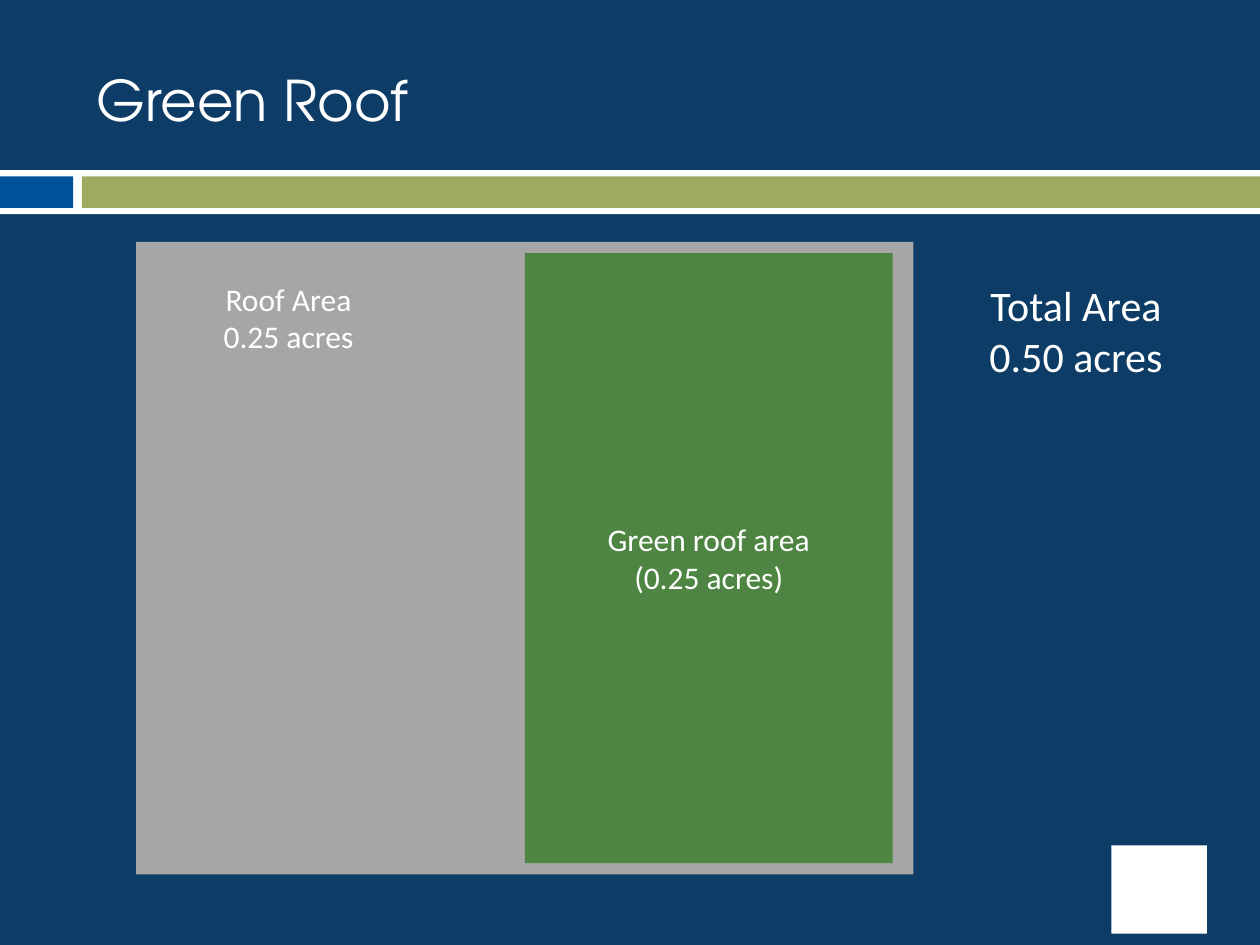
from dataclasses import dataclass

from pptx import Presentation
from pptx.dml.color import RGBColor
from pptx.enum.shapes import MSO_SHAPE
from pptx.enum.text import MSO_ANCHOR, PP_ALIGN
from pptx.oxml.ns import qn
from pptx.util import Inches, Pt
from lxml.etree import SubElement


@dataclass(frozen=True)
class Theme:
    """Colours, fonts and type sizes of the slide."""
    navy: str = "0D3C67"
    white: str = "FFFFFF"
    blue: str = "00529B"
    olive: str = "7F8E2B"
    gray: str = "A6A6A6"
    green: str = "4E8542"
    head: str = "TeX Gyre Adventor"
    body: str = "Calibri"
    title: int = 32
    large: int = 24
    small: int = 18


THEME = Theme()


def apply(target, values):
    """Set each attribute of the target from a dict of values."""
    for name, value in values.items():
        setattr(target, name, value)


def add_rect(slide, box, color, alpha=None):
    """Draw a plain filled rectangle, with opacity in percent if given."""
    rect = slide.shapes.add_shape(MSO_SHAPE.RECTANGLE, *map(Inches, box))
    rect.shadow.inherit = False
    rect.fill.solid()
    rect.fill.fore_color.rgb = RGBColor.from_string(color)
    rect.line.fill.background()
    if alpha is not None:
        tone = rect.fill._xPr.find(qn("a:solidFill"))[0]
        SubElement(tone, qn("a:alpha")).set("val", str(alpha * 1000))
    return rect


def write(shape, lines, size, face=THEME.body, align=PP_ALIGN.CENTER,
          anchor=MSO_ANCHOR.TOP):
    """Put white lines of text in a shape, one paragraph each."""
    frame = shape.text_frame
    apply(frame, {"word_wrap": True, "vertical_anchor": anchor,
                  "text": "\n".join(lines)})
    for para in frame.paragraphs:
        para.alignment = align
        apply(para.font, {"size": Pt(size), "name": face})
        para.font.color.rgb = RGBColor.from_string(THEME.white)


def add_label(slide, box, lines, size, **style):
    """Add a text box holding the given lines."""
    label = slide.shapes.add_textbox(*map(Inches, box))
    write(label, lines, size, **style)


def add_band(slide, box):
    """Draw the white band with its blue tab and olive bar."""
    left, top, width, height = box
    edge, tab, start = 0.05, 0.58, 0.65
    inner = height - 2 * edge
    add_rect(slide, box, THEME.white)
    add_rect(slide, (left, top + edge, tab, inner), THEME.blue)
    add_rect(slide, (left + start, top + edge, width - start, inner),
             THEME.olive, 75)


def add_roof(slide, box):
    """Draw the roof with its label and the green part on its right."""
    left, top, width, height = box
    add_rect(slide, box, THEME.gray)
    add_label(slide, (left + 0.17, top + 0.25, 2.08, 0.71),
              ["Roof Area", "0.25 acres"], THEME.small)
    inset = 0.09
    green = add_rect(slide, (left + width / 2, top + inset, 2.92,
                             height - 2 * inset), THEME.green)
    write(green, ["Green roof area", "(0.25 acres)"], THEME.small,
          anchor=MSO_ANCHOR.MIDDLE)


def main():
    """Build the slide and save it."""
    deck = Presentation()
    apply(deck, {"slide_width": Inches(10), "slide_height": Inches(7.5)})
    slide = deck.slides.add_slide(deck.slide_layouts[6])
    slide.background.fill.solid()
    slide.background.fill.fore_color.rgb = RGBColor.from_string(THEME.navy)
    add_band(slide, (0, 1.35, 10, 0.35))
    add_rect(slide, (8.82, 6.71, 0.76, 0.7), THEME.white)
    add_label(slide, (0.67, 0.25, 8.92, 1.08), ["Green Roof"], THEME.title,
              face=THEME.head, align=PP_ALIGN.LEFT, anchor=MSO_ANCHOR.MIDDLE)
    add_roof(slide, (1.08, 1.92, 6.17, 5.02))
    add_label(slide, (7.5, 2.17, 2.08, 0.91),
              ["Total Area", "0.50 acres"], THEME.large)
    deck.save("out.pptx")


if __name__ == "__main__":
    main()
